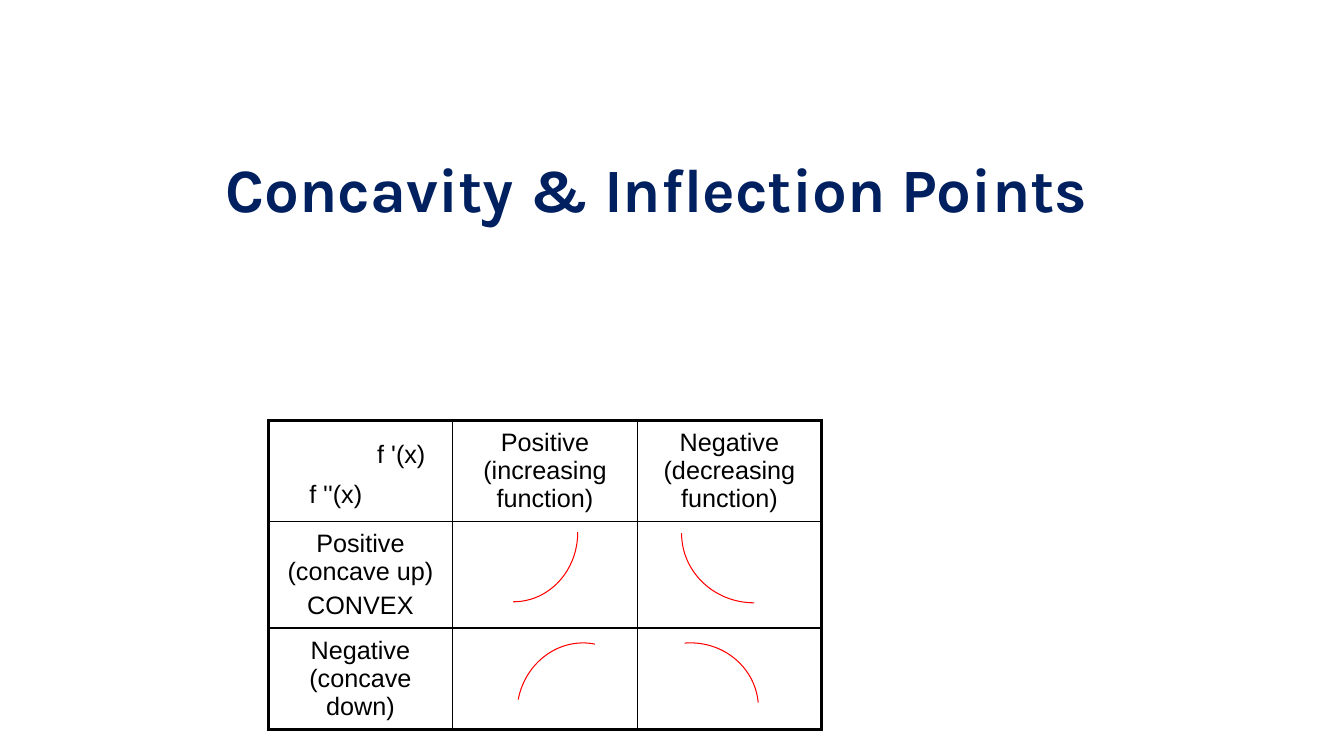
"""Builds the slide on concavity and inflection points with its sign table."""
from lxml.etree import SubElement
from pptx import Presentation
from pptx.dml.color import RGBColor
from pptx.enum.text import MSO_ANCHOR, PP_ALIGN
from pptx.oxml import parse_xml
from pptx.oxml.ns import nsdecls, qn
from pptx.util import Inches, Pt

NAVY = RGBColor(0x00, 0x20, 0x60)
BLACK = RGBColor(0, 0, 0)
RED = RGBColor(0xFF, 0, 0)


def style(para, font, size, color):
    para.alignment = PP_ALIGN.CENTER
    para.font.name = font
    para.font.size = Pt(size)
    para.font.color.rgb = color


def edge(cell, side, width):
    line = parse_xml(f'<a:ln{side} {nsdecls("a")} w="{Pt(width)}"/>')
    fill = SubElement(line, qn("a:solidFill"))
    SubElement(fill, qn("a:srgbClr")).set("val", str(BLACK))
    cell._tc.get_or_add_tcPr().append(line)


deck = Presentation()
deck.slide_width = Inches(13.33)
deck.slide_height = Inches(7.5)
slide = deck.slides.add_slide(deck.slide_layouts[5])

title = slide.shapes.title
title.left, title.top = Inches(0.1), Inches(0.86)
title.width, title.height = Inches(12.83), Inches(2)
title.text_frame.text = "Concavity & Inflection Points"
title.text_frame.vertical_anchor = MSO_ANCHOR.MIDDLE
head = title.text_frame.paragraphs[0]
style(head, "Karla", 44, NAVY)
head.font.bold = True

rows = [
    ["", "Positive\v(increasing function)", "Negative (decreasing function)"],
    ["Positive (concave up)\nCONVEX", "", ""],
    ["Negative (concave down)", "", ""],
]
heights = [1, 1.06, 1.01]
table = slide.shapes.add_table(
    3, 3, Inches(2.66), Inches(4.17), Inches(5.49), Inches(sum(heights))).table
table.first_row = False
table.horz_banding = False
for r, row in enumerate(rows):
    table.rows[r].height = Inches(heights[r])
    for c, text in enumerate(row):
        cell = table.cell(r, c)
        cell.vertical_anchor = MSO_ANCHOR.MIDDLE
        if text:
            cell.text = text
            for para in cell.text_frame.paragraphs:
                style(para, "Arial", 18, BLACK)
                para.space_before = Pt(4)
        outer = {"L": c == 0, "R": c == 2, "T": r == 0, "B": r == 2}
        for side, thick in outer.items():
            edge(cell, side, 2.25 if thick else 1)
        cell.fill.background()

for text, left, top in [("f '(x)", 3.44, 4.3), ("f ''(x)", 2.79, 4.7)]:
    box = slide.shapes.add_textbox(
        Inches(left), Inches(top), Inches(1.08), Inches(0.4))
    box.text_frame.word_wrap = True
    box.text_frame.text = text
    style(box.text_frame.paragraphs[0], "Arial", 18, BLACK)

curves = [
    [(5.09, 5.97), (5.45, 5.97), (5.73, 5.66), (5.73, 5.28)],
    [(7.48, 5.98), (7.08, 5.98), (6.76, 5.67), (6.76, 5.29)],
    [(5.9, 6.39), (5.55, 6.32), (5.21, 6.57), (5.14, 6.94)],
    [(7.52, 6.97), (7.49, 6.62), (7.17, 6.35), (6.79, 6.38)],
]
for knots in curves:
    start, *rest = [(Inches(x), Inches(y)) for x, y in knots]
    pen = slide.shapes.build_freeform(*start)
    pen.add_line_segments(rest, close=False)
    curve = pen.convert_to_shape()
    lines = list(curve._element.iter(qn("a:lnTo")))
    bend = SubElement(lines[0].getparent(), qn("a:cubicBezTo"))
    for line in lines:
        bend.append(line[0])
        line.getparent().remove(line)
    curve.shadow.inherit = False
    curve.fill.background()
    curve.line.color.rgb = RED
    curve.line.width = Pt(0.75)

deck.save("out.pptx")
